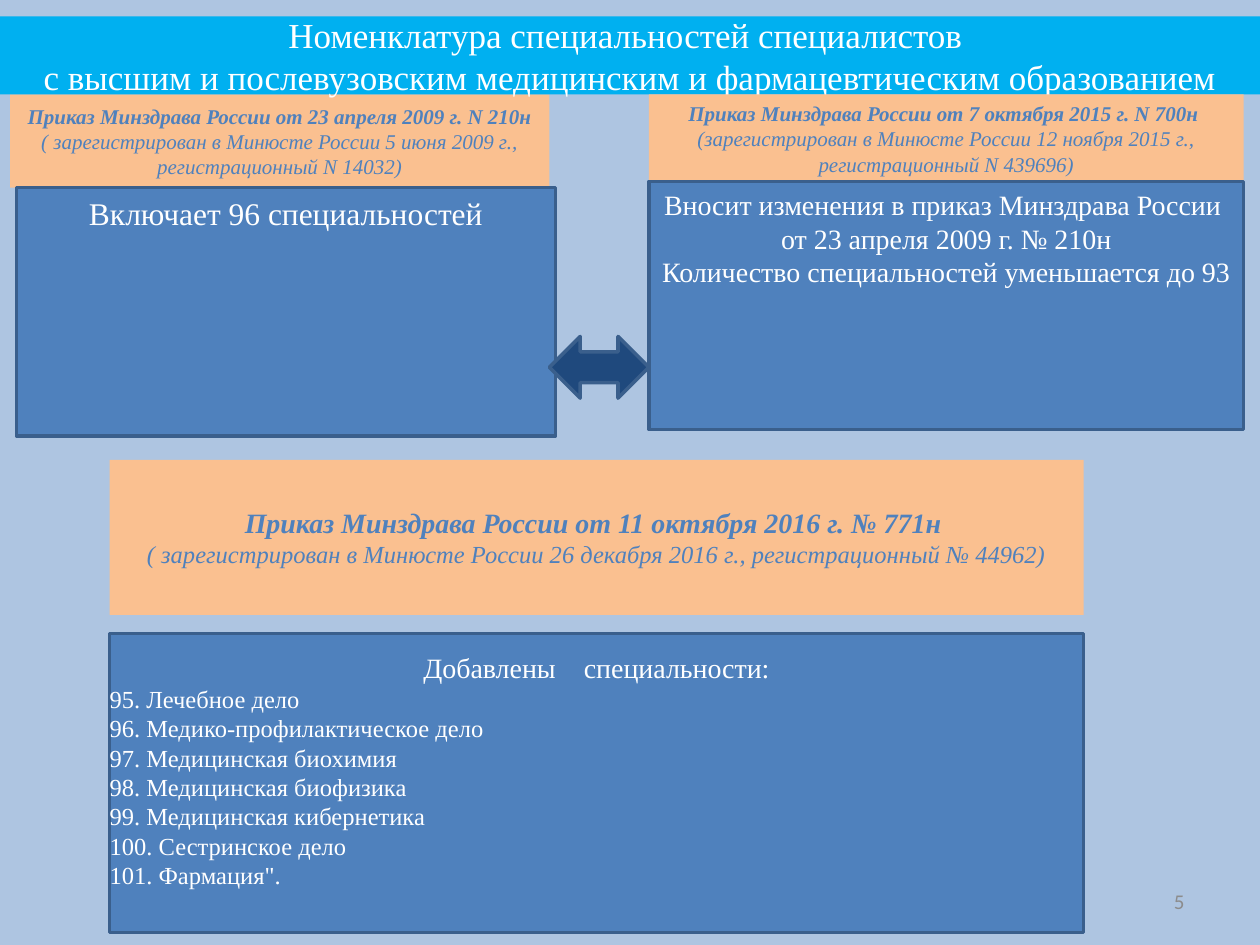
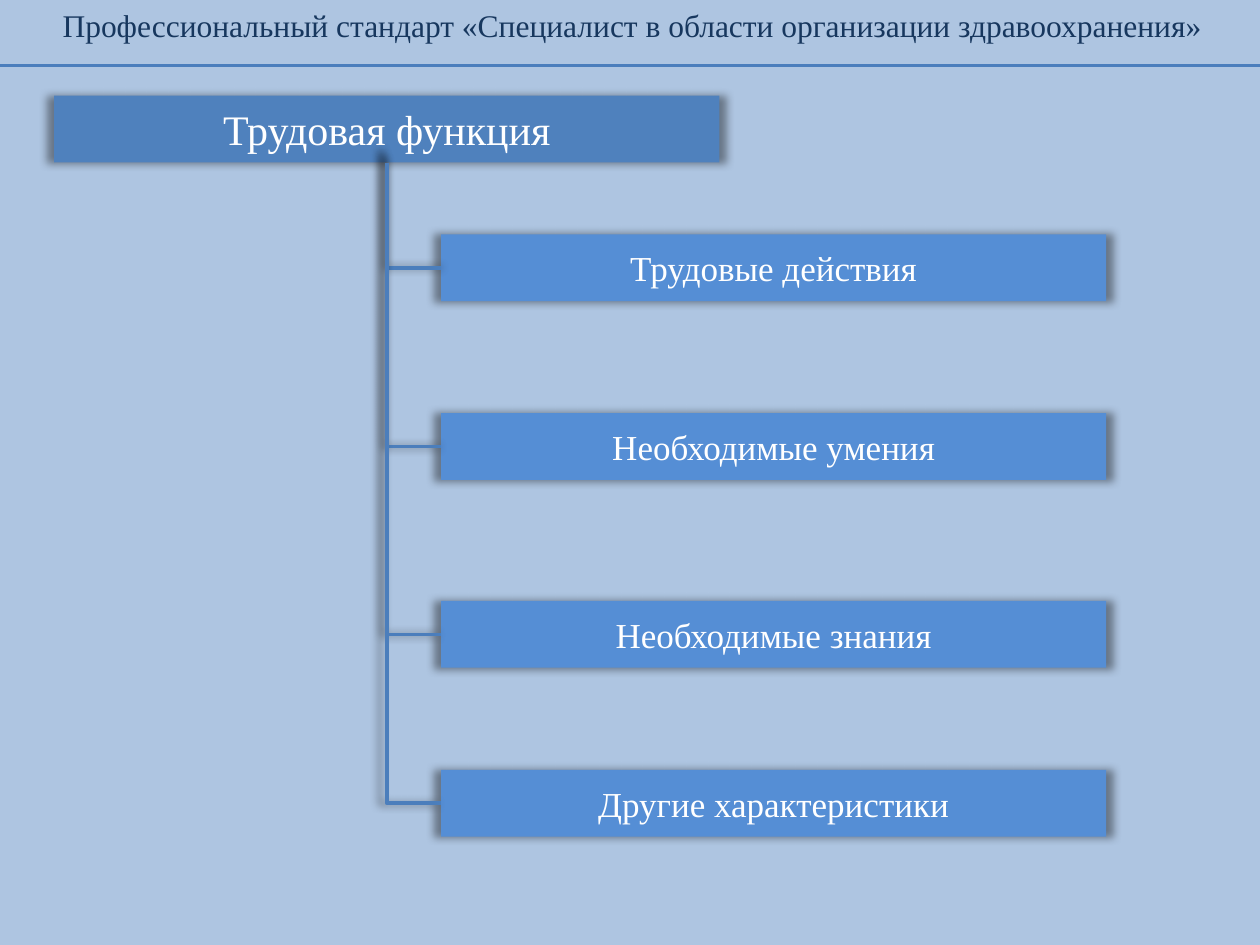
from dataclasses import dataclass

from lxml import etree
from pptx import Presentation
from pptx.dml.color import RGBColor
from pptx.enum.shapes import MSO_CONNECTOR, MSO_SHAPE
from pptx.enum.text import MSO_ANCHOR, PP_ALIGN
from pptx.oxml.ns import qn
from pptx.shapes.autoshape import Shape
from pptx.shapes.connector import Connector
from pptx.slide import Slide
from pptx.util import Inches, Pt

RECT, DOUBLE_ARROW = MSO_SHAPE.RECTANGLE, MSO_SHAPE.LEFT_RIGHT_ARROW
STRAIGHT, ELBOW = MSO_CONNECTOR.STRAIGHT, MSO_CONNECTOR.ELBOW
TOP, MIDDLE = MSO_ANCHOR.TOP, MSO_ANCHOR.MIDDLE
LEFT, CENTER, RIGHT = PP_ALIGN.LEFT, PP_ALIGN.CENTER, PP_ALIGN.RIGHT
BOTTOM_SITE, LEFT_SITE = 2, 1


@dataclass(frozen=True)
class Theme:
    """Colours, fonts and type sizes shared by the slides."""
    background: str = "AEC5E1"
    blue: str = "4F81BD"
    light_blue: str = "558ED5"
    outline: str = "3A5F8C"
    connector: str = "4B7EBC"
    arrow: str = "1F497D"
    band: str = "00B0F0"
    peach: str = "FAC090"
    heading: str = "17375E"
    grey: str = "8C8C8C"
    white: str = "FFFFFF"
    shadow: str = "000000"
    font: str = "Times New Roman"
    number_font: str = "Calibri"
    note: int = 12
    item: int = 14
    text: int = 16
    large: int = 18
    title: int = 20
    root: int = 24


THEME = Theme()


@dataclass(frozen=True)
class Run:
    """A piece of text with its own look."""
    text: str
    size: int
    color: str = THEME.white
    bold: bool = False
    italic: bool = False
    font: str = THEME.font
    tracking: int = 0


@dataclass(frozen=True)
class Para:
    """A paragraph made of runs."""
    runs: tuple[Run, ...]
    align: PP_ALIGN = CENTER


@dataclass(frozen=True)
class Box:
    """A filled shape in inches with its text."""
    left: float
    top: float
    width: float
    height: float
    fill: str
    paras: tuple[Para, ...] = ()
    outlined: bool = False
    soft: bool = False
    anchor: MSO_ANCHOR = MIDDLE
    side: float = 0.1
    pad: float = 0.05
    kind: MSO_SHAPE = RECT


def rgb(color: str) -> RGBColor:
    """Turn a hex string into a colour."""
    return RGBColor.from_string(color)


def lines(size: int, *texts: str, align: PP_ALIGN = CENTER) -> tuple[Para, ...]:
    """Make white paragraphs of one size."""
    return tuple(Para((Run(text, size),), align) for text in texts)


def order(name: str, registration: str, name_size: int = THEME.note,
          registration_size: int = THEME.note) -> tuple[Para, ...]:
    """Make the bold name of an order and its registration line."""
    return (Para((Run(name, name_size, THEME.blue, True, True),)),
            Para((Run(registration, registration_size, THEME.blue, False, True),)))


def write(shape: Shape, paras: tuple[Para, ...]) -> None:
    """Fill a shape with paragraphs run by run."""
    tf = shape.text_frame
    for i, para in enumerate(paras):
        p = tf.paragraphs[0] if i == 0 else tf.add_paragraph()
        p.alignment = para.align
        for run in para.runs:
            r = p.add_run()
            r.text = run.text
            r.font.name, r.font.size = run.font, Pt(run.size)
            r.font.bold, r.font.italic = run.bold, run.italic
            r.font.color.rgb = rgb(run.color)
            if run.tracking:
                r.font._element.set("spc", str(run.tracking * 100))


def set_effects(shape: Shape | Connector, soft: bool) -> None:
    """Replace the theme shadow by none or by a soft centred one."""
    effects = etree.SubElement(shape._element.spPr, qn("a:effectLst"))
    if soft:
        outer = etree.SubElement(effects, qn("a:outerShdw"), blurRad=str(Pt(5)),
                                 sx="102000", sy="102000", algn="ctr", rotWithShape="0")
        color = etree.SubElement(outer, qn("a:srgbClr"), val=THEME.shadow)
        etree.SubElement(color, qn("a:alpha"), val="40000")


def add_box(s: Slide, box: Box) -> Shape:
    """Draw a box with its text."""
    sp = s.shapes.add_shape(box.kind, Inches(box.left), Inches(box.top),
                            Inches(box.width), Inches(box.height))
    sp.fill.solid()
    sp.fill.fore_color.rgb = rgb(box.fill)
    if box.outlined:
        sp.line.color.rgb = rgb(THEME.outline)
        sp.line.width = Pt(2)
    else:
        sp.line.fill.background()
    set_effects(sp, box.soft)
    tf = sp.text_frame
    tf.word_wrap = True
    tf.vertical_anchor = box.anchor
    tf.margin_left = tf.margin_right = Inches(box.side)
    tf.margin_top = tf.margin_bottom = Inches(box.pad)
    write(sp, box.paras)
    return sp


def add_label(s: Slide, left: float, top: float, width: float, height: float,
              para: Para, anchor: MSO_ANCHOR = TOP, wrap: bool = True) -> None:
    """Draw a text box with one paragraph."""
    sp = s.shapes.add_textbox(Inches(left), Inches(top), Inches(width), Inches(height))
    sp.text_frame.word_wrap = wrap
    sp.text_frame.vertical_anchor = anchor
    write(sp, (para,))


def style_line(line: Connector, width: float, soft: bool = False) -> None:
    """Colour a connector and set its shadow."""
    line.line.color.rgb = rgb(THEME.connector)
    line.line.width = Pt(width)
    set_effects(line, soft)


def add_branch(s: Slide, root: Shape, child: Shape) -> None:
    """Join the bottom of the root to the left side of a child with one bend."""
    x, y = root.left + root.width // 2, root.top + root.height
    reach, drop = child.left - x, child.top + child.height // 2 - y
    line = s.shapes.add_connector(ELBOW, x, y, x + reach, y + drop)
    line.begin_connect(root, BOTTOM_SITE)
    line.end_connect(child, LEFT_SITE)
    line.left, line.top = x + (reach - drop) // 2, y + (drop - reach) // 2
    line.width, line.height = drop, reach
    sp_pr = line._element.spPr
    xfrm = sp_pr.find(qn("a:xfrm"))
    xfrm.set("rot", "16200000")
    xfrm.set("flipH", "1")
    sp_pr.find(qn("a:prstGeom")).set("prst", "bentConnector2")
    style_line(line, 2, soft=True)


def new_slide(prs: Presentation) -> Slide:
    """Add a blank slide with the shared background."""
    s = prs.slides.add_slide(prs.slide_layouts[6])
    s.background.fill.solid()
    s.background.fill.fore_color.rgb = rgb(THEME.background)
    return s


def build_nomenclature(prs: Presentation) -> None:
    """Build the slide that compares the orders on specialties."""
    s = new_slide(prs)
    add_label(s, 7.17, 6.95, 2.33, 0.4,
              Para((Run("5", THEME.note, THEME.grey, font=THEME.number_font),), RIGHT), MIDDLE)
    added_heading = Para((Run("Добавлены", THEME.text), Run(" ", THEME.text, tracking=12),
                          Run("специальности:", THEME.text)))
    added_items = lines(
        THEME.item, "95. Лечебное дело", "96. Медико-профилактическое дело",
        "97. Медицинская биохимия", "98. Медицинская биофизика",
        "99. Медицинская кибернетика", "100. Сестринское дело", "101. Фармация\".", align=LEFT)
    boxes = (
        Box(0.08, 0.75, 4.28, 0.74, THEME.peach, order(
            "Приказ Минздрава России от 23 апреля 2009 г. N 210н",
            "( зарегистрирован в Минюсте России 5 июня 2009 г., регистрационный N 14032)"), side=0),
        Box(0, 0.13, 10, 0.62, THEME.band, lines(
            THEME.title, "Номенклатура специальностей специалистов ",
            "с высшим и послевузовским медицинским и фармацевтическим образованием")),
        Box(0.13, 1.49, 4.28, 1.97, THEME.blue, lines(
            THEME.large, "Включает 96 специальностей"), outlined=True, anchor=TOP, side=0),
        Box(5.15, 0.75, 4.72, 0.74, THEME.peach, order(
            "Приказ Минздрава России от 7 октября 2015 г. N 700н ",
            "(зарегистрирован в Минюсте России 12 ноября 2015 г., регистрационный N 439696)"),
            anchor=TOP),
        Box(5.15, 1.44, 4.72, 1.97, THEME.blue, lines(
            THEME.text, "Вносит изменения в приказ Минздрава России ",
            "от 23 апреля 2009 г. № 210н", "Количество специальностей уменьшается до 93"),
            outlined=True, anchor=TOP, side=0),
        Box(0.87, 3.65, 7.73, 1.23, THEME.peach, order(
            "Приказ Минздрава России от 11 октября 2016 г. № 771н ",
            "( зарегистрирован в Минюсте России 26 декабря 2016 г., регистрационный № 44962)",
            THEME.text, THEME.item)),
        Box(0.87, 5.03, 7.73, 2.37, THEME.blue, (added_heading, *added_items),
            outlined=True, anchor=TOP, side=0, pad=0.13),
        Box(4.36, 2.67, 0.79, 0.49, THEME.arrow, outlined=True, kind=DOUBLE_ARROW),
    )
    for box in boxes:
        add_box(s, box)


def build_standard(prs: Presentation) -> None:
    """Build the slide with the tree of a job function."""
    s = new_slide(prs)
    add_label(s, 0.35, 0, 9.34, 0.4, Para((Run(
        "Профессиональный стандарт «Специалист в области организации здравоохранения»",
        THEME.large, THEME.heading),)), wrap=False)
    rule = s.shapes.add_connector(STRAIGHT, 0, Inches(0.52), prs.slide_width, Inches(0.52))
    style_line(rule, 1.75)
    width, height = 5.28, 0.53
    root = add_box(s, Box(0.43, 0.76, width, height, THEME.blue,
                          lines(THEME.root, "Трудовая функция"), soft=True))
    parts = ((1.86, "Трудовые действия"), (3.28, "Необходимые умения"),
             (4.77, "Необходимые знания"), (6.11, "Другие характеристики"))
    for top, name in parts:
        child = add_box(s, Box(3.5, top, width, height, THEME.light_blue,
                               lines(THEME.title, name), soft=True))
        add_branch(s, root, child)


def main() -> None:
    """Build and save the presentation."""
    prs = Presentation()
    prs.slide_width, prs.slide_height = Inches(10), Inches(7.5)
    build_nomenclature(prs)
    build_standard(prs)
    prs.save("out.pptx")


if __name__ == "__main__":
    main()
